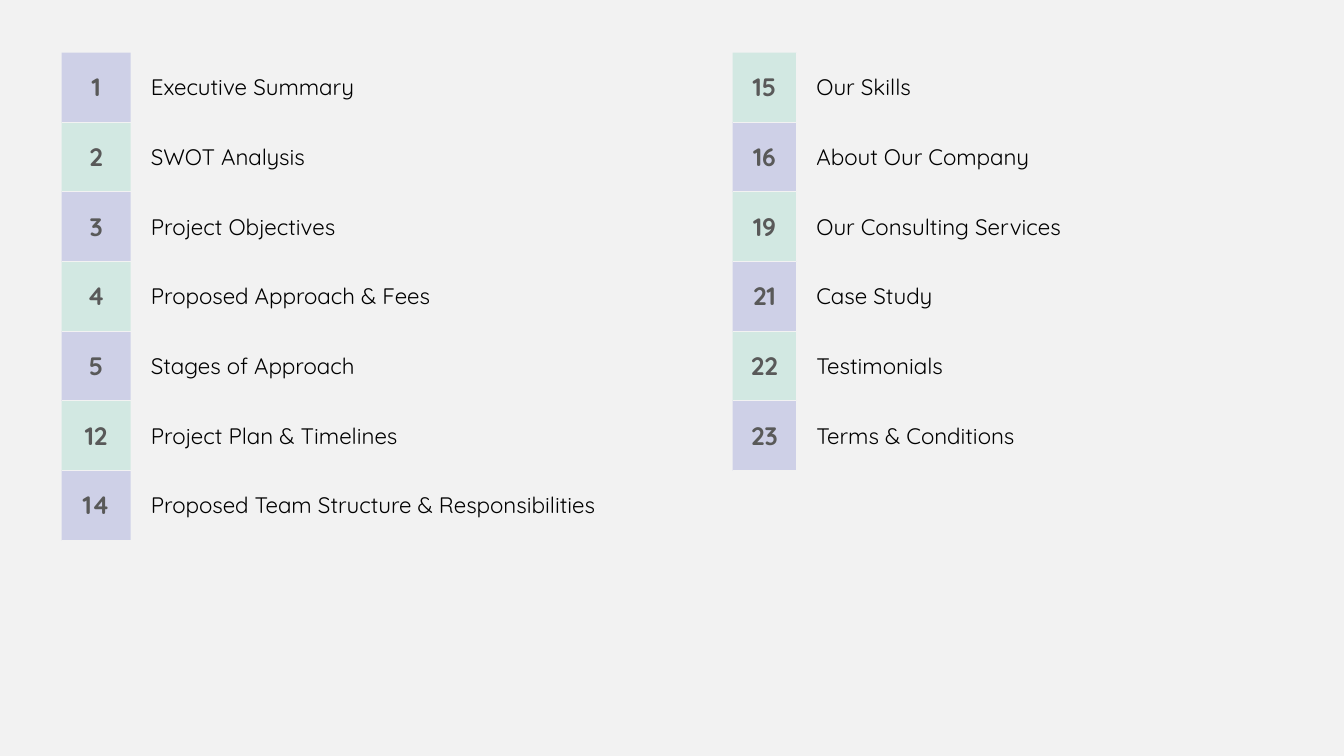
"""Build a contents slide with two numbered lists of sections."""
from lxml import etree
from pptx import Presentation
from pptx import util as u
from pptx.dml.color import RGBColor
from pptx.enum import text
from pptx.oxml import ns

GREY = RGBColor(0xF2, 0xF2, 0xF2)
DARK = RGBColor(0x59, 0x59, 0x59)
BLACK = RGBColor(0, 0, 0)
BLUE = RGBColor(0x63, 0x6D, 0xCA)
GREEN = RGBColor(0x74, 0xCE, 0xB3)
PLAIN = "{2D5ABB26-0587-4C30-8999-92F81FD0307C}"

LEFT = [
    ("1", "Executive Summary"),
    ("2", "SWOT Analysis"),
    ("3", "Project Objectives"),
    ("4", "Proposed Approach & Fees"),
    ("5", "Stages of Approach"),
    ("12", "Project Plan & Timelines"),
    ("14", "Proposed Team Structure & Responsibilities"),
]
RIGHT = [
    ("15", "Our Skills"),
    ("16", "About Our Company"),
    ("19", "Our Consulting Services"),
    ("21", "Case Study"),
    ("22", "Testimonials"),
    ("23", "Terms & Conditions"),
]


class Deck:
    font = "Quicksand"
    top, row = 37.5, 49.8
    num = {"size": u.Pt(18), "bold": True}
    name = {"size": u.Pt(16), "bold": False}

    def __init__(self, wide, high):
        self.prs = Presentation()
        self.prs.slide_width, self.prs.slide_height = u.Pt(wide), u.Pt(high)
        self.slide = self.prs.slides.add_slide(self.prs.slide_layouts[6])
        fill = self.slide.background.fill
        fill.solid()
        fill.fore_color.rgb = GREY

    def cell(self, cell, words, style, ink, back):
        cell.text = words
        cell.vertical_anchor = text.MSO_ANCHOR.MIDDLE
        font = cell.text_frame.paragraphs[0].runs[0].font
        for key, value in {"name": self.font, **style}.items():
            setattr(font, key, value)
        font.color.rgb = ink
        cell.fill.solid()
        cell.fill.fore_color.rgb = back

    def tint(self, cell, share):
        color = cell._tc.tcPr.find(".//" + ns.qn("a:srgbClr"))
        etree.SubElement(color, ns.qn("a:alpha"), val=str(share * 1000))

    def edge(self, cell, side):
        line = etree.Element(ns.qn("a:" + side), w=str(u.Pt(0.75)))
        fill = etree.SubElement(line, ns.qn("a:solidFill"))
        etree.SubElement(fill, ns.qn("a:srgbClr"), val=str(GREY))
        cell._tc.tcPr.insert(0, line)

    def table(self, items, left, cols, tints):
        frame = self.slide.shapes.add_table(
            len(items), 2, u.Pt(left), u.Pt(self.top),
            u.Pt(sum(cols)), u.Pt(self.row * len(items)))
        table = frame.table
        table.first_row = table.horz_banding = False
        table._tbl.tblPr.find(ns.qn("a:tableStyleId")).text = PLAIN
        for col, wide in zip(table.columns, cols):
            col.width = u.Pt(wide)
        for i, (num, name) in enumerate(items):
            table.rows[i].height = u.Pt(self.row)
            box, label = table.cell(i, 0), table.cell(i, 1)
            self.cell(box, num, self.num, DARK, tints[i % 2])
            box.text_frame.paragraphs[0].alignment = text.PP_ALIGN.CENTER
            self.tint(box, 25)
            self.edge(box, "lnB")
            if i:
                self.edge(box, "lnT")
            self.cell(label, name, self.name, BLACK, GREY)
            label.margin_left = u.Pt(14.4)

    def save(self):
        self.prs.save("out.pptx")


def main():
    deck = Deck(960, 540)
    deck.table(LEFT, 44, (49.4, 370), (BLUE, GREEN))
    deck.table(RIGHT, 523.4, (45.4, 347), (GREEN, BLUE))
    deck.save()


if __name__ == "__main__":
    main()
